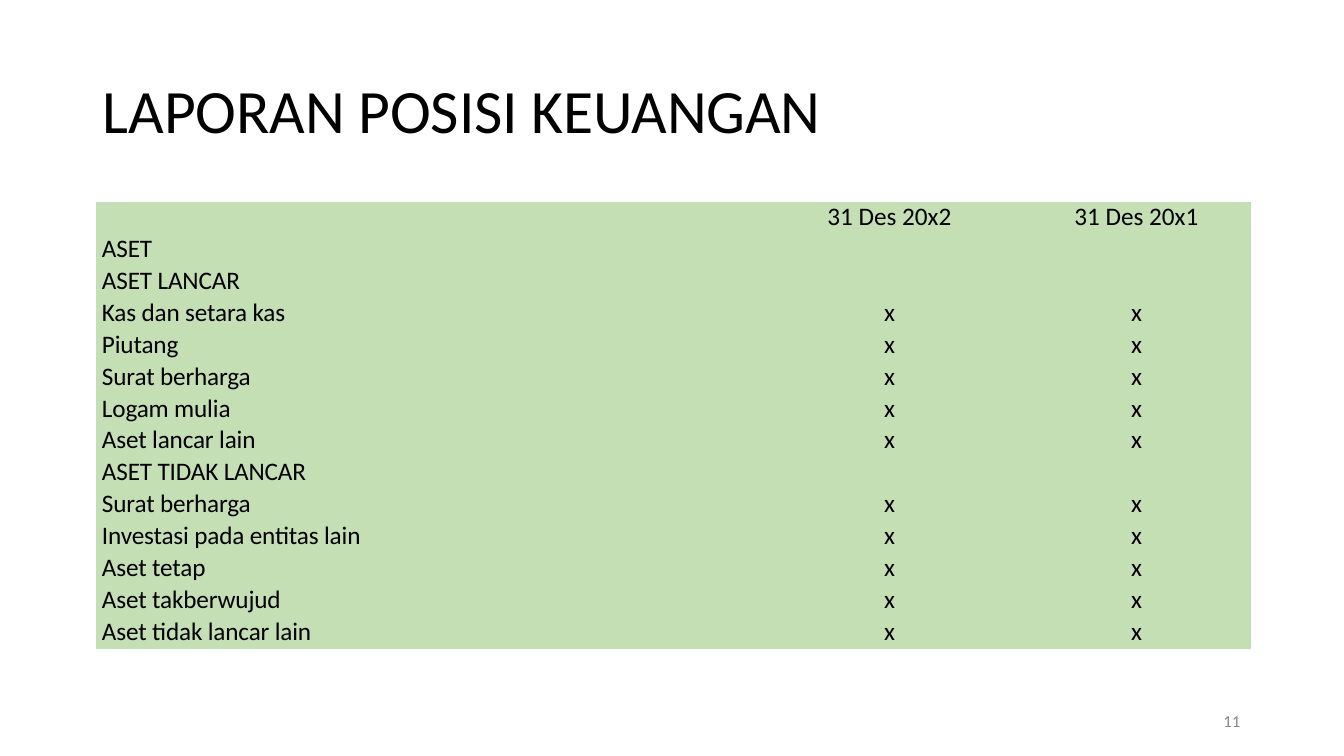
from pptx import Presentation
from pptx.dml.color import RGBColor
from pptx.enum.text import MSO_ANCHOR, PP_ALIGN
from pptx.util import Cm, Pt

GREEN, BLACK, GREY = "C5DFB4", "000000", "888888"
NO_GRID = "{2D5ABB26-0587-4C30-8999-92F81FD0307C}"
DATES = ["31 Des 20x2", "31 Des 20x1"]

# Account lines, each with whether it has amounts
LINES = [
    ("ASET", False),
    ("ASET LANCAR", False),
    ("Kas dan setara kas", True),
    ("Piutang", True),
    ("Surat berharga", True),
    ("Logam mulia", True),
    ("Aset lancar lain", True),
    ("ASET TIDAK LANCAR", False),
    ("Surat berharga", True),
    ("Investasi pada entitas lain", True),
    ("Aset tetap", True),
    ("Aset takberwujud", True),
    ("Aset tidak lancar lain", True),
]


def color(code):
    return RGBColor.from_string(code)


def write(frame, text, size=18, ink=BLACK, align=PP_ALIGN.LEFT,
          indent=0, leading=None, tight=False):
    para = frame.paragraphs[0]
    para.alignment = align
    if leading:
        para.line_spacing = leading
    props = para._p.get_or_add_pPr()
    props.set("marL", str(Cm(indent)))
    props.set("indent", "0")
    run = para.add_run()
    run.text = text
    font = run.font
    font.name, font.size = "Calibri", Pt(size)
    font.color.rgb = color(ink)
    if tight:
        run._r.get_or_add_rPr().set("spc", "-10")


def add_text(slide, text, left, top, width, height, inset=None, **form):
    box = slide.shapes.add_textbox(Cm(left), Cm(top), Cm(width), Cm(height))
    frame = box.text_frame
    frame.word_wrap = True
    frame.vertical_anchor = MSO_ANCHOR.MIDDLE
    if inset is not None:
        frame.margin_left = frame.margin_right = Cm(inset)
        frame.margin_top = frame.margin_bottom = Cm(inset)
    write(frame, text, **form)


def add_grid(slide, left, top, widths, heights):
    shape = slide.shapes.add_table(
        len(heights), len(widths), Cm(left), Cm(top),
        Cm(sum(widths)), Cm(sum(heights)))
    grid = shape.table
    grid.first_row = grid.horz_banding = False
    grid._tbl.tblPr[0].text = NO_GRID
    for col, width in zip(grid.columns, widths):
        col.width = Cm(width)
    for row, height in zip(grid.rows, heights):
        row.height = Cm(height)
    for cell in grid.iter_cells():
        cell.margin_left = cell.margin_right = 0
        cell.margin_top = cell.margin_bottom = 0
        cell.fill.solid()
        cell.fill.fore_color.rgb = color(GREEN)
    return grid


def fill_grid(grid):
    # The wide left indent centres the first date column
    indents = [3.57, 0.23]
    for col, (date, indent) in enumerate(zip(DATES, indents), 1):
        write(grid.cell(0, col).text_frame, date,
              align=PP_ALIGN.CENTER, indent=indent)
    for row, (label, valued) in enumerate(LINES, 1):
        write(grid.cell(row, 0).text_frame, label,
              indent=0.15, leading=Pt(19.5), tight=True)
        if valued:
            for col, indent in enumerate(indents, 1):
                write(grid.cell(row, col).text_frame, "x",
                      align=PP_ALIGN.CENTER, indent=indent, leading=Pt(19.5))


def main():
    deck = Presentation()
    deck.slide_width, deck.slide_height = Cm(33.87), Cm(19.05)
    slide = deck.slides.add_slide(deck.slide_layouts[6])

    # Balance sheet
    first, last, total = 0.89, 0.74, 11.28
    inner = len(LINES) - 1
    pitch = (total - first - last) / inner
    grid = add_grid(slide, 2.42, 5.08, [13.31, 9.8, 5.99],
                    [first] + [pitch] * inner + [last])
    fill_grid(grid)

    # Page number
    add_text(slide, "11", 30.73, 17.96, 0.64, 0.48, inset=0, size=12,
             ink=GREY, indent=0.1, leading=Pt(12.4))

    # Title
    add_text(slide, "LAPORAN POSISI KEUANGAN", 2.34, 1.02, 29.21, 3.68,
             size=44, leading=0.9, tight=True)

    deck.save("out.pptx")


if __name__ == "__main__":
    main()
